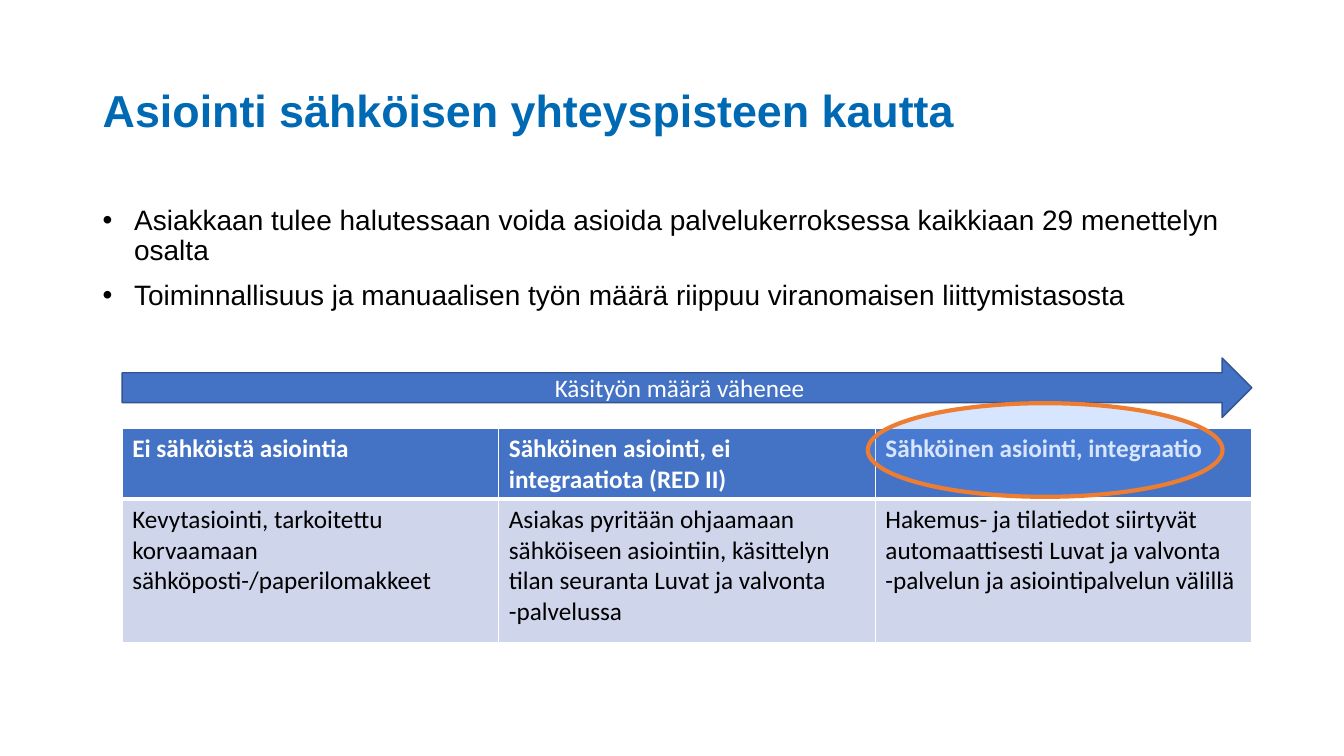
from lxml.etree import SubElement
from pptx import Presentation
from pptx.dml.color import RGBColor
from pptx.enum.shapes import MSO_SHAPE
from pptx.enum.text import MSO_ANCHOR, PP_ALIGN
from pptx.oxml.ns import qn
from pptx.util import Cm, Pt

TITLE_BLUE = RGBColor(0x00, 0x69, 0xB4)
BLUE = RGBColor(0x44, 0x72, 0xC4)
DARK_BLUE = RGBColor(0x32, 0x54, 0x91)
PALE_BLUE = RGBColor(0xCF, 0xD5, 0xEA)
HIGHLIGHT_BLUE = RGBColor(0x5B, 0x96, 0xFF)
ORANGE = RGBColor(0xED, 0x7D, 0x31)
WHITE = RGBColor(0xFF, 0xFF, 0xFF)
BLACK = RGBColor(0x00, 0x00, 0x00)

TITLE = "Asiointi sähköisen yhteyspisteen kautta"
BULLETS = [
    "Asiakkaan tulee halutessaan voida asioida palvelukerroksessa kaikkiaan 29 menettelyn osalta",
    "Toiminnallisuus ja manuaalisen työn määrä riippuu viranomaisen liittymistasosta",
]
ARROW_LABEL = "Käsityön määrä vähenee"
LEVELS = [
    ("Ei sähköistä asiointia",
     "Kevytasiointi, tarkoitettu korvaamaan sähköposti-/paperilomakkeet"),
    ("Sähköinen asiointi, ei integraatiota (RED II)",
     "Asiakas pyritään ohjaamaan sähköiseen asiointiin, käsittelyn tilan seuranta "
     "Luvat ja valvonta -palvelussa"),
    ("Sähköinen asiointi, integraatio",
     "Hakemus- ja tilatiedot siirtyvät automaattisesti Luvat ja valvonta -palvelun "
     "ja asiointipalvelun välillä"),
]


def style_font(font, name, size, color, bold=False):
    """Set the typeface, size, colour and weight of a font."""
    font.name = name
    font.size = Pt(size)
    font.color.rgb = color
    font.bold = bold


def add_title(slide, left, top, width, height):
    """Place the vertically centred title."""
    text_frame = slide.shapes.add_textbox(left, top, width, height).text_frame
    text_frame.word_wrap = True
    text_frame.vertical_anchor = MSO_ANCHOR.MIDDLE
    text_frame.text = TITLE
    paragraph = text_frame.paragraphs[0]
    paragraph.line_spacing = 0.9
    style_font(paragraph.runs[0].font, "Arial", 32, TITLE_BLUE, True)


def add_bullets(slide, left, top, width, height):
    """Place the bulleted introduction."""
    text_frame = slide.shapes.add_textbox(left, top, width, height).text_frame
    text_frame.word_wrap = True
    text_frame.text = "\n".join(BULLETS)
    for index, paragraph in enumerate(text_frame.paragraphs):
        properties = paragraph._p.get_or_add_pPr()
        properties.set("marL", str(Cm(0.79)))
        properties.set("indent", str(-Cm(0.79)))
        SubElement(properties, qn("a:buFont"), typeface="Arial")
        SubElement(properties, qn("a:buChar"), char="•")
        paragraph.line_spacing = 0.9
        if index:
            paragraph.space_before = Pt(10)
        style_font(paragraph.runs[0].font, "Arial", 20, BLACK)


def add_border(cell, side, width):
    """Draw a white border on one side of a table cell."""
    line = SubElement(cell._tc.get_or_add_tcPr(), qn(f"a:ln{side}"), w=str(Pt(width)))
    fill = SubElement(line, qn("a:solidFill"))
    SubElement(fill, qn("a:srgbClr"), val=str(WHITE))


def add_level_table(slide, left, top, width, height):
    """Place the table of integration levels, one column per level."""
    table = slide.shapes.add_table(2, len(LEVELS), left, top, width, height).table
    table.horz_banding = False
    header_height = Cm(1.78)
    table.rows[0].height = header_height
    table.rows[1].height = height - header_height
    for column, texts in enumerate(LEVELS):
        for row, text in enumerate(texts):
            is_header = row == 0
            cell = table.cell(row, column)
            for side in "LRTB":
                at_divider = side == ("B" if is_header else "T")
                add_border(cell, side, 3 if at_divider else 1)
            cell.fill.solid()
            cell.fill.fore_color.rgb = BLUE if is_header else PALE_BLUE
            cell.text_frame.text = text
            font = cell.text_frame.paragraphs[0].runs[0].font
            style_font(font, "Calibri", 18, WHITE if is_header else BLACK, is_header)


def add_filled_shape(slide, kind, box, fill_color, line_color, line_width):
    """Place a preset shape with a solid fill and outline."""
    shape = slide.shapes.add_shape(kind, *box)
    shape.shadow.inherit = False
    shape.fill.solid()
    shape.fill.fore_color.rgb = fill_color
    shape.line.color.rgb = line_color
    shape.line.width = Pt(line_width)
    return shape


def add_work_arrow(slide, *box):
    """Place the labelled arrow above the table."""
    arrow = add_filled_shape(slide, MSO_SHAPE.RIGHT_ARROW, box, BLUE, DARK_BLUE, 1)
    text_frame = arrow.text_frame
    text_frame.vertical_anchor = MSO_ANCHOR.MIDDLE
    text_frame.text = ARROW_LABEL
    paragraph = text_frame.paragraphs[0]
    paragraph.alignment = PP_ALIGN.CENTER
    style_font(paragraph.runs[0].font, "Calibri", 18, WHITE)


def add_highlight(slide, *box):
    """Place the translucent ellipse around the last heading."""
    ellipse = add_filled_shape(slide, MSO_SHAPE.OVAL, box, HIGHLIGHT_BLUE, ORANGE, 3)
    color = ellipse._element.spPr.find(qn("a:solidFill")).find(qn("a:srgbClr"))
    SubElement(color, qn("a:alpha"), val="24000")


def main():
    """Build and save the presentation."""
    presentation = Presentation()
    presentation.slide_width = Cm(33.87)
    presentation.slide_height = Cm(19.05)
    slide = presentation.slides.add_slide(presentation.slide_layouts[6])
    add_title(slide, Cm(2.34), Cm(1.02), Cm(29.21), Cm(3.68))
    add_bullets(slide, Cm(2.34), Cm(5.08), Cm(29.21), Cm(3.68))
    add_level_table(slide, Cm(3.08), Cm(10.8), Cm(28.47), Cm(5.39))
    add_work_arrow(slide, Cm(3.08), Cm(9.02), Cm(28.47), Cm(1.5))
    add_highlight(slide, Cm(21.87), Cm(10.16), Cm(8.94), Cm(2.36))
    presentation.save("out.pptx")


if __name__ == "__main__":
    main()
